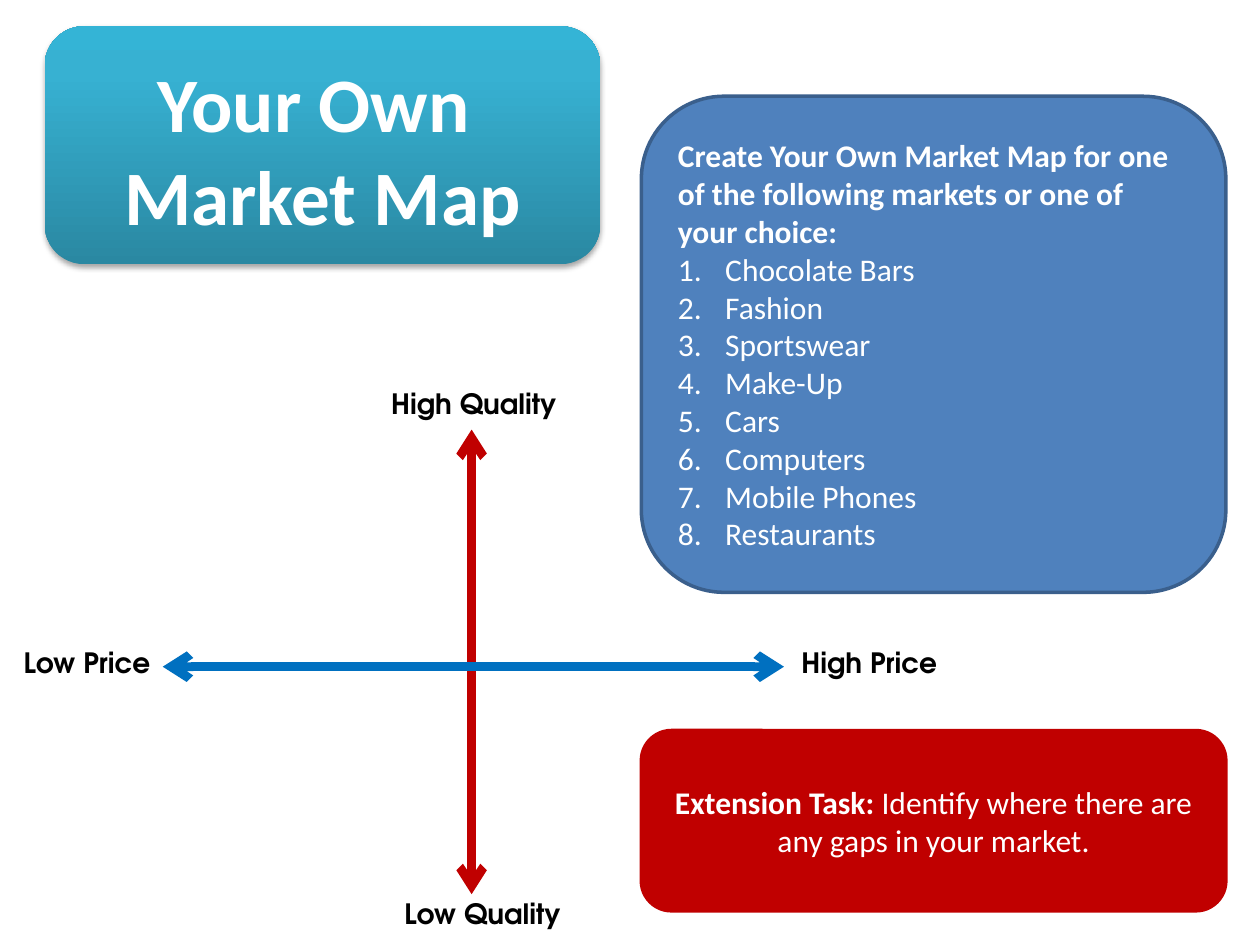
from lxml import etree
from pptx import Presentation
from pptx.dml.color import RGBColor
from pptx.enum.shapes import MSO_CONNECTOR, MSO_SHAPE
from pptx.enum.text import MSO_ANCHOR, MSO_AUTO_SIZE, PP_ALIGN
from pptx.oxml import parse_xml
from pptx.oxml.ns import qn
from pptx.util import Pt

STRAIGHT = MSO_CONNECTOR.STRAIGHT
ROUNDED = MSO_SHAPE.ROUNDED_RECTANGLE
MIDDLE = MSO_ANCHOR.MIDDLE
GROW = MSO_AUTO_SIZE.SHAPE_TO_FIT_TEXT
LEFT, CENTER = PP_ALIGN.LEFT, PP_ALIGN.CENTER

WHITE = RGBColor(0xFF, 0xFF, 0xFF)
BLACK = RGBColor(0x00, 0x00, 0x00)
RED = RGBColor(0xC0, 0x00, 0x00)
AXIS_BLUE = RGBColor(0x00, 0x70, 0xC0)
PANEL_BLUE = RGBColor(0x4F, 0x81, 0xBD)
PANEL_EDGE = RGBColor(0x3A, 0x5F, 0x8C)
NAMESPACE = "http://schemas.openxmlformats.org/drawingml/2006/main"


def style_paragraph(paragraph, font_name, size, color, alignment):
    paragraph.alignment = alignment
    paragraph.font.name = font_name
    paragraph.font.size = Pt(size)
    paragraph.font.color.rgb = color


def add_panel(left, top, width, height, fill, edge):
    panel = slide.shapes.add_shape(ROUNDED, Pt(left), Pt(top), Pt(width), Pt(height))
    panel.shadow.inherit = False
    panel.fill.solid()
    panel.fill.fore_color.rgb = fill
    panel.line.color.rgb = edge
    panel.line.width = Pt(2)
    panel.text_frame.word_wrap = True
    panel.text_frame.vertical_anchor = MIDDLE
    return panel


presentation = Presentation()
presentation.slide_width = Pt(720)
presentation.slide_height = Pt(540)
slide = presentation.slides.add_slide(presentation.slide_layouts[6])

banner = slide.shapes.add_shape(ROUNDED, Pt(25.5), Pt(15), Pt(317.5), Pt(136))
banner.shadow.inherit = False
banner.line.fill.background()
gradient = parse_xml(
    f'<a:gradFill xmlns:a="{NAMESPACE}" rotWithShape="1"><a:gsLst>'
    '<a:gs pos="0"><a:srgbClr val="2A88A2"/></a:gs>'
    '<a:gs pos="80000"><a:srgbClr val="37B1D2"/></a:gs>'
    '<a:gs pos="100000"><a:srgbClr val="34B4D6"/></a:gs>'
    '</a:gsLst><a:lin ang="16200000" scaled="0"/></a:gradFill>'
)
banner_properties = banner.element.spPr
banner_properties.find(qn("a:prstGeom")).addnext(gradient)
banner_properties.find(qn("a:effectLst")).append(parse_xml(
    f'<a:outerShdw xmlns:a="{NAMESPACE}" blurRad="{Pt(3.1)}" dist="{Pt(1.8)}" '
    'dir="5400000" rotWithShape="0"><a:srgbClr val="000000">'
    '<a:alpha val="35000"/></a:srgbClr></a:outerShdw>'
))

title = slide.shapes.add_textbox(Pt(25.5), Pt(31.5), Pt(317.5), Pt(106.5))
title.text_frame.word_wrap = True
title.text_frame.vertical_anchor = MIDDLE
paragraph = title.text_frame.paragraphs[0]
paragraph.text = "Your Own \vMarket Map"
style_paragraph(paragraph, "Calibri", 44, WHITE, CENTER)
paragraph.font.bold = True

axes = [
    (269.5, 245.5, 269.5, 511, RED),
    (448, 381, 93, 381, AXIS_BLUE),
]
for start_x, start_y, end_x, end_y, color in axes:
    axis = slide.shapes.add_connector(STRAIGHT, Pt(start_x), Pt(start_y), Pt(end_x), Pt(end_y))
    axis.line.color.rgb = color
    axis.line.width = Pt(5)
    for end in ("a:headEnd", "a:tailEnd"):
        etree.SubElement(axis.line._get_or_add_ln(), qn(end), type="arrow")
    etree.SubElement(axis.element.spPr, qn("a:effectLst"))

axis_labels = [
    ("High Quality", 140.5, 217.5),
    ("Low Quality", 145.5, 508.5),
    ("Low Price", -80.5, 365.5),
    ("High Price", 366.5, 365.5),
]
for text, left, top in axis_labels:
    label = slide.shapes.add_textbox(Pt(left), Pt(top), Pt(260.5), Pt(24))
    label.text_frame.word_wrap = True
    label.text_frame.auto_size = GROW
    paragraph = label.text_frame.paragraphs[0]
    paragraph.text = text
    style_paragraph(paragraph, "TeX Gyre Adventor", 16, BLACK, CENTER)
    paragraph.font.bold = True

task_frame = add_panel(366.5, 55, 334, 283.5, PANEL_BLUE, PANEL_EDGE).text_frame
paragraph = task_frame.paragraphs[0]
paragraph.text = "Create Your Own Market Map for one of the following markets or one of your choice:"
style_paragraph(paragraph, "Calibri", 18, WHITE, LEFT)
paragraph.font.bold = True

markets = [
    "Chocolate Bars", "Fashion", "Sportswear", "Make-Up",
    "Cars", "Computers", "Mobile Phones", "Restaurants",
]
for market in markets:
    paragraph = task_frame.add_paragraph()
    paragraph.text = market
    style_paragraph(paragraph, "Calibri", 18, WHITE, LEFT)
    properties = paragraph._p.get_or_add_pPr()
    properties.set("marL", str(Pt(27)))
    properties.set("indent", str(-Pt(27)))
    numbering = parse_xml(f'<a:buAutoNum xmlns:a="{NAMESPACE}" type="arabicPeriod"/>')
    properties.find(qn("a:defRPr")).addprevious(numbering)

extension_frame = add_panel(366.5, 417.5, 334, 103, RED, RED).text_frame
paragraph = extension_frame.paragraphs[0]
style_paragraph(paragraph, "Calibri", 18, WHITE, CENTER)
heading = paragraph.add_run()
heading.text = "Extension Task: "
heading.font.bold = True
paragraph.add_run().text = "Identify where there are any gaps in your market."

presentation.save("out.pptx")
